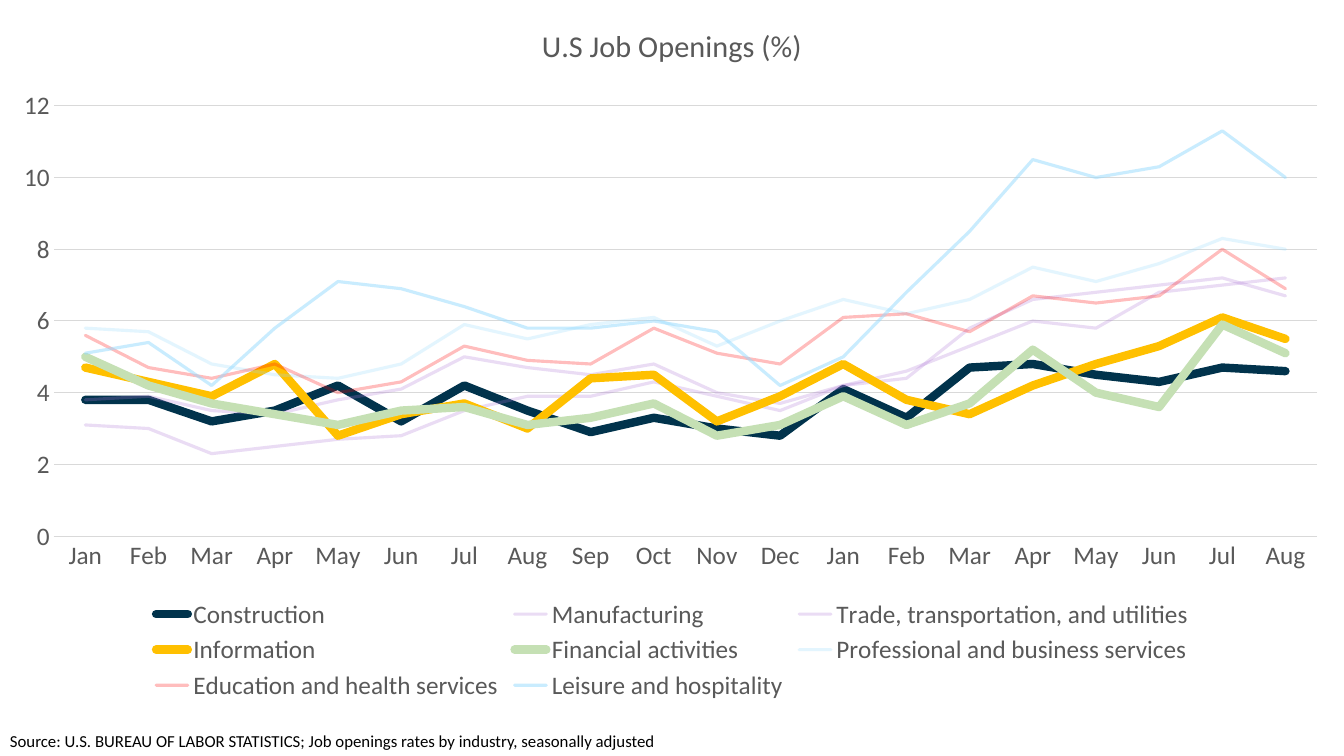
from lxml import etree
from pptx import Presentation
from pptx.chart.data import CategoryChartData
from pptx.dml.color import RGBColor
from pptx.enum.chart import XL_CHART_TYPE, XL_LEGEND_POSITION, XL_TICK_MARK
from pptx.enum.text import MSO_ANCHOR
from pptx.oxml.ns import qn
from pptx.util import Inches, Pt

MONTHS = "Jan Feb Mar Apr May Jun Jul Aug Sep Oct Nov Dec".split()
CATEGORIES = MONTHS + MONTHS[:8]
NAVY, PURPLE, GOLD, GREEN, SKY, RED = "01334C", "AE78D6", "FFC000", "C5E0B4", "94DAFE", "FF0000"
BOLD, THIN = 6, 2.25

# Industry, colour, line width, opacity in percent, monthly rates
INDUSTRIES = [
    ("Construction", NAVY, BOLD, 100,
     [3.8, 3.8, 3.2, 3.5, 4.2, 3.2, 4.2, 3.5, 2.9, 3.3, 3, 2.8, 4.1, 3.3, 4.7, 4.8, 4.5, 4.3, 4.7, 4.6]),
    ("Manufacturing", PURPLE, THIN, 25,
     [3.1, 3, 2.3, 2.5, 2.7, 2.8, 3.5, 3.9, 3.9, 4.3, 3.9, 3.5, 4.2, 4.4, 5.8, 6.6, 6.8, 7, 7.2, 6.7]),
    ("Trade, transportation, and utilities", PURPLE, THIN, 25,
     [3.8, 3.9, 3.5, 3.4, 3.8, 4.1, 5, 4.7, 4.5, 4.8, 4, 3.7, 4.2, 4.6, 5.3, 6, 5.8, 6.8, 7, 7.2]),
    ("Information", GOLD, BOLD, 100,
     [4.7, 4.3, 3.9, 4.8, 2.8, 3.4, 3.7, 3, 4.4, 4.5, 3.2, 3.9, 4.8, 3.8, 3.4, 4.2, 4.8, 5.3, 6.1, 5.5]),
    ("Financial activities", GREEN, BOLD, 100,
     [5, 4.2, 3.7, 3.4, 3.1, 3.5, 3.6, 3.1, 3.3, 3.7, 2.8, 3.1, 3.9, 3.1, 3.7, 5.2, 4, 3.6, 5.9, 5.1]),
    ("Professional and business services", SKY, THIN, 25,
     [5.8, 5.7, 4.8, 4.5, 4.4, 4.8, 5.9, 5.5, 5.9, 6.1, 5.3, 6, 6.6, 6.2, 6.6, 7.5, 7.1, 7.6, 8.3, 8]),
    ("Education and health services", RED, THIN, 25,
     [5.6, 4.7, 4.4, 4.8, 4, 4.3, 5.3, 4.9, 4.8, 5.8, 5.1, 4.8, 6.1, 6.2, 5.7, 6.7, 6.5, 6.7, 8, 6.9]),
    ("Leisure and hospitality", SKY, THIN, 50,
     [5.1, 5.4, 4.2, 5.8, 7.1, 6.9, 6.4, 5.8, 5.8, 6, 5.7, 4.2, 5, 6.8, 8.5, 10.5, 10, 10.3, 11.3, 10]),
]


def rgb(value):
    return RGBColor.from_string(value)


def apply(target, formats):
    for name, value in formats.items():
        setattr(target, name, value)


class Deck:
    """Style and current slide; positions are shares of the slide's size."""
    FONT, INK, GREY, RULE = "Calibri", "000000", "595959", "D9D9D9"

    def __init__(self, width, height):
        self.prs = Presentation()
        apply(self.prs, {"slide_width": Inches(width), "slide_height": Inches(height)})
        self.slide = self.prs.slides.add_slide(self.prs.slide_layouts[6])

    def place(self, x, y, w, h):
        width, height = self.prs.slide_width, self.prs.slide_height
        return [int(x * width), int(y * height), int(w * width), int(h * height)]

    def style(self, font, size, color):
        apply(font, {"name": self.FONT, "size": Pt(size), "bold": False})
        font.color.rgb = rgb(color)

    def rule(self, line, color, width, opacity=100):
        line.width = Pt(width)
        line.color.rgb = rgb(color)
        if opacity < 100:
            color_node = line.fill._xPr.find(".//" + qn("a:srgbClr"))
            etree.SubElement(color_node, qn("a:alpha")).set("val", str(opacity * 1000))

    def note(self, text, box):
        note = self.slide.shapes.add_textbox(*self.place(*box))
        note.fill.solid()
        note.fill.fore_color.rgb = rgb("FFFFFF")
        apply(note.text_frame, {"word_wrap": True, "vertical_anchor": MSO_ANCHOR.BOTTOM, "text": text})
        self.style(note.text_frame.paragraphs[0].runs[0].font, 12, self.INK)

    def line_chart(self, title, categories, industries, box, plot_area):
        data = CategoryChartData()
        data.categories = categories
        for name, *_, rates in industries:
            data.add_series(name, rates)
        chart = self.slide.shapes.add_chart(XL_CHART_TYPE.LINE, *self.place(*box), data).chart
        self.style(chart.font, 18, self.INK)

        # Title and legend
        chart.has_title = True
        chart.chart_title.text_frame.text = title
        self.style(chart.chart_title.text_frame.paragraphs[0].runs[0].font, 21.6, self.GREY)
        chart.has_legend = True
        apply(chart.legend, {"position": XL_LEGEND_POSITION.BOTTOM, "include_in_layout": False})
        self.style(chart.legend.font, 18, self.GREY)

        # Axes
        months, rates = chart.category_axis, chart.value_axis
        for axis in (months, rates):
            apply(axis, {"major_tick_mark": XL_TICK_MARK.NONE, "minor_tick_mark": XL_TICK_MARK.NONE})
            self.style(axis.tick_labels.font, 18, self.GREY)
        self.rule(months.format.line, self.RULE, 0.75)
        apply(rates, {"minimum_scale": 0, "maximum_scale": 12, "major_unit": 2})
        rates.format.line.fill.background()
        self.rule(rates.major_gridlines.format.line, self.RULE, 0.75)

        # Lines with round ends
        for series, (_, color, width, opacity, _) in zip(chart.plots[0].series, industries):
            series.smooth = False
            self.rule(series.format.line, color, width, opacity)
            outline = series.format.line.fill._xPr
            outline.set("cap", "rnd")
            etree.SubElement(outline, qn("a:round"))

        # Fixed plot area
        area = chart.plots[0]._element.getparent()
        for old in area.findall(qn("c:layout")):
            area.remove(old)
        layout = etree.Element(qn("c:layout"))
        area.insert(0, layout)
        manual = etree.SubElement(layout, qn("c:manualLayout"))
        settings = {"layoutTarget": "inner", "xMode": "edge", "yMode": "edge"}
        settings.update(zip("xywh", plot_area))
        for name, value in settings.items():
            etree.SubElement(manual, qn("c:" + name)).set("val", str(value))


def main():
    deck = Deck(13.33, 7.5)
    deck.note("Source: U.S. BUREAU OF LABOR STATISTICS; Job openings rates by industry, seasonally adjusted",
              (0, 14 / 15, 0.87, 1 / 15))
    deck.line_chart("U.S Job Openings (%)", CATEGORIES, INDUSTRIES,
                    (0, 0, 1, 14 / 15), (0.04, 0.15, 0.94, 0.61))
    deck.prs.save("out.pptx")


if __name__ == "__main__":
    main()
